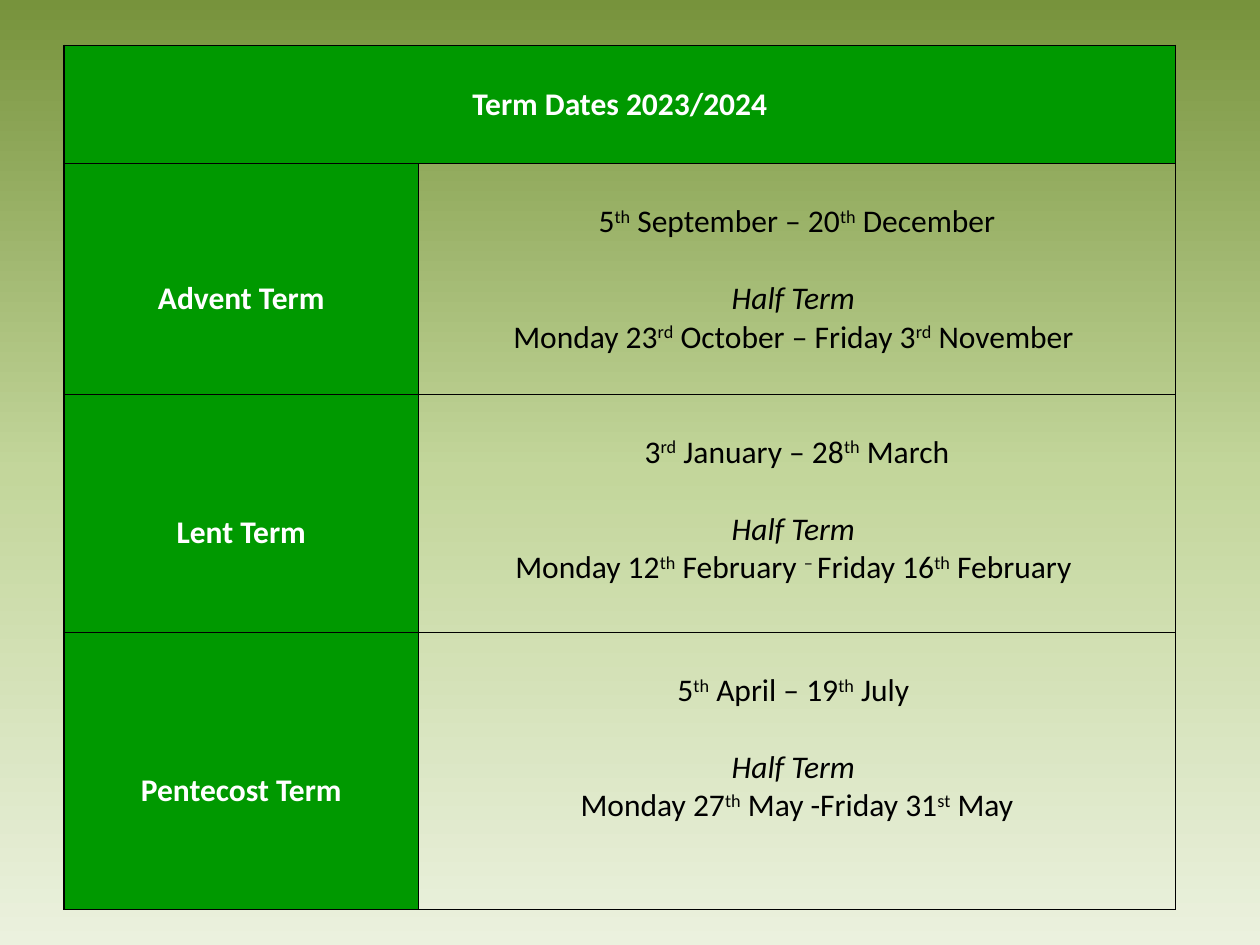
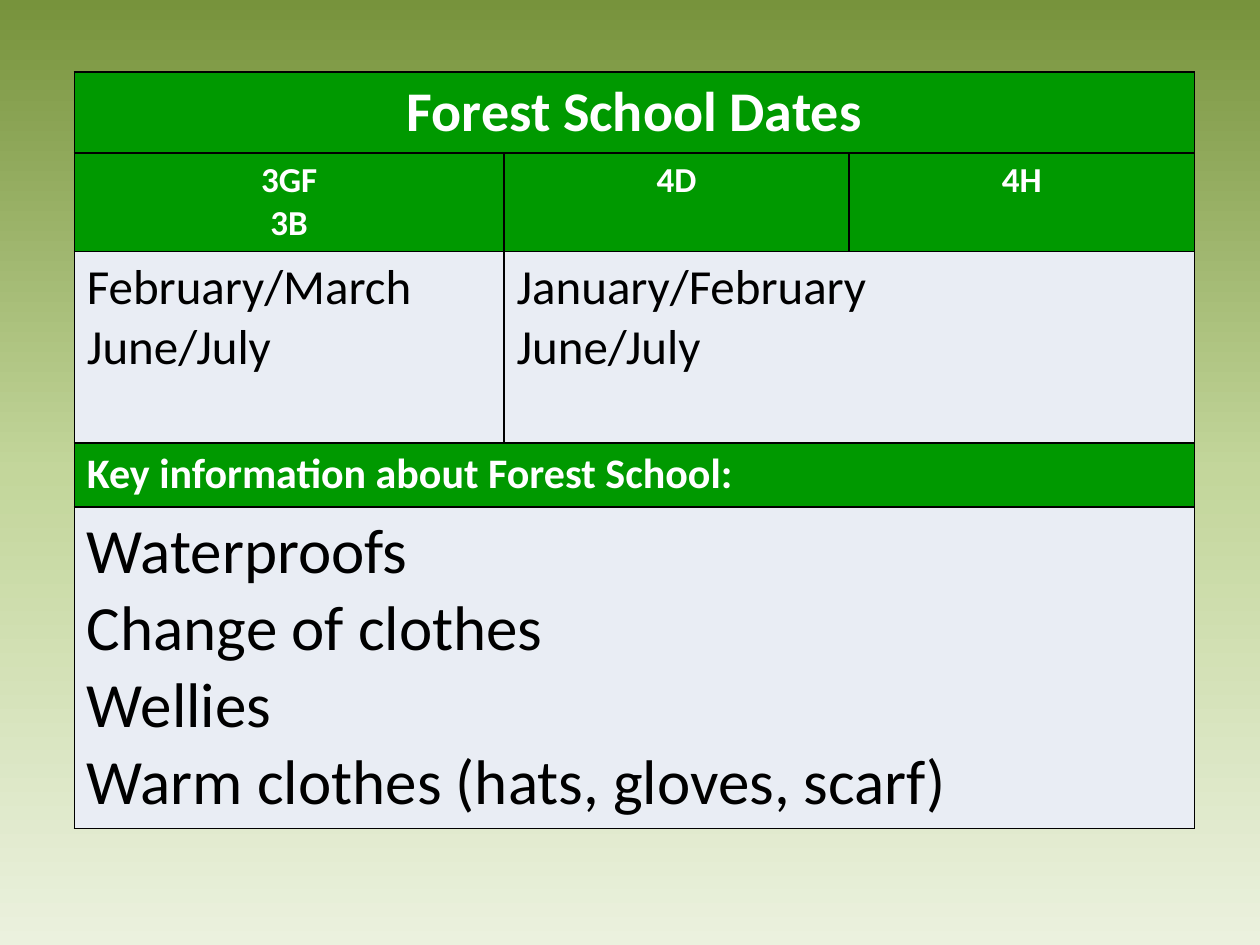
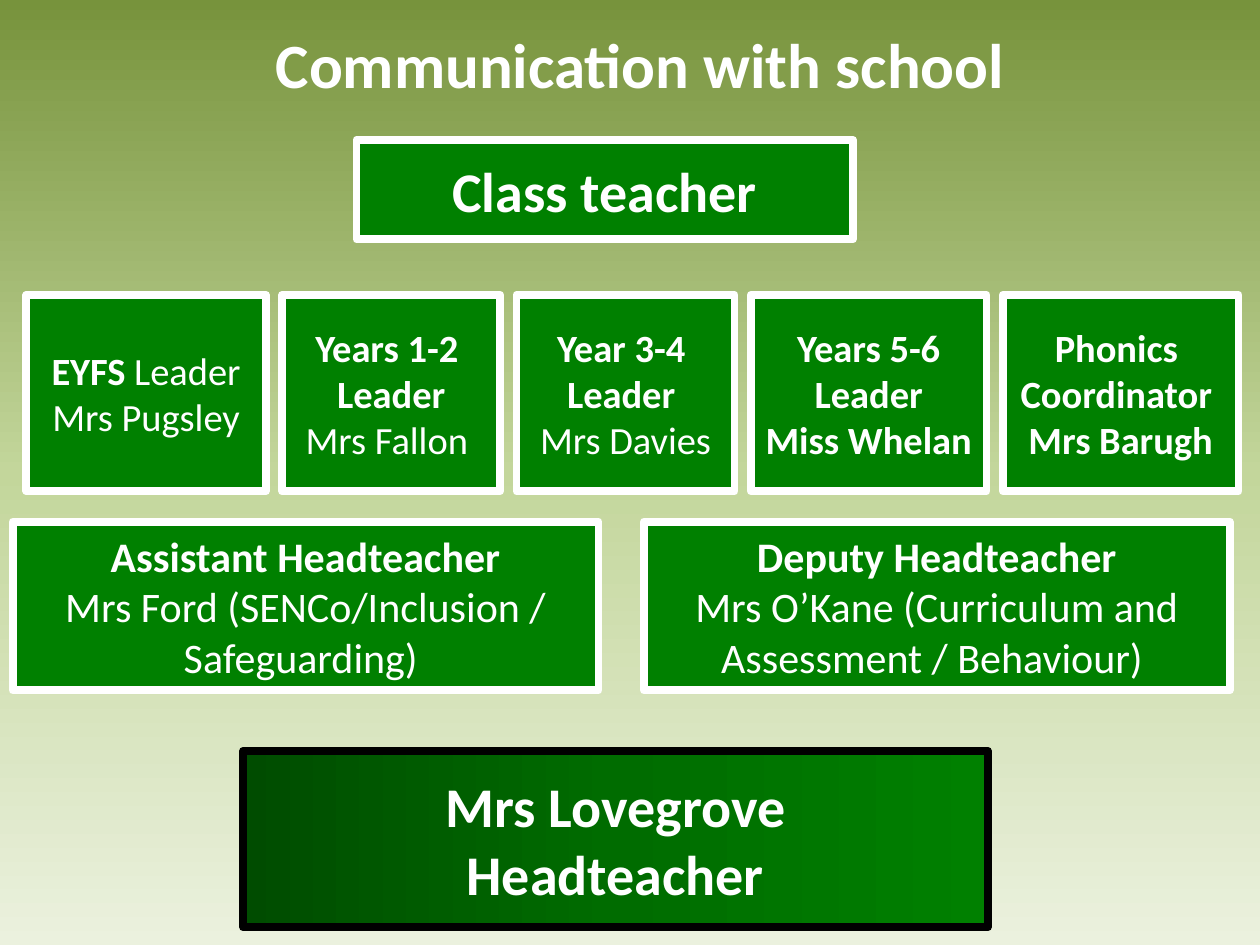
from lxml.etree import SubElement
from pptx import Presentation
from pptx.dml.color import RGBColor
from pptx.enum.shapes import MSO_SHAPE as Shape
from pptx.enum.text import MSO_ANCHOR as Anchor, PP_ALIGN as Align
from pptx.oxml.ns import qn
from pptx.util import Inches, Pt

COLORS = {
    "white": "FFFFFF",
    "black": "000000",
    "table green": "009900",
    "box green": "008000",
    "pale": "E9EDF4",
}
BACKGROUND = [(0, "77933C"), (50, "C3D69B"), (100, "EBF1DE")]
HEAD_GRADIENT = [(0, "004C00"), (50, "006C00"), (100, "008000")]
FONT = "Calibri"
BOLD, ITALIC, RAISED = "*", "_", "^"  # marks that switch a style on and off

TERMS = [
    ("Advent Term", 1.83, "5^th^ September – 20^th^ December",
     "Monday 23^rd^ October – Friday 3^rd^ November "),
    ("Lent Term", 1.89, "3^rd^ January – 28^th^ March",
     "Monday 12^th^ February ^– ^Friday 16^th^ February "),
    ("Pentecost Term", 2.2, "5^th^ April – 19^th^ July ",
     "Monday 27^th^ May -Friday 31^st^ May"),
]
LEADERS = [
    (1.9, ["*EYFS* Leader", "Mrs Pugsley"]),
    (1.73, ["*Years 1-2 *", "*Leader*", "Mrs Fallon "]),
    (1.73, ["*Year 3-4 *", "*Leader *", "Mrs Davies"]),
    (1.87, ["*Years 5-6*", "*Leader*", "*Miss Whelan *"]),
    (1.87, ["*Phonics *", "*Coordinator *", "*Mrs Barugh*"]),
]
DEPUTIES = [
    (0.1, ["*Assistant Headteacher*", "Mrs Ford (SENCo/Inclusion / Safeguarding) "]),
    (5.11, ["*Deputy Headteacher*", "Mrs O’Kane (Curriculum and Assessment / Behaviour) "]),
]


def rgb(name):
    return RGBColor.from_string(COLORS[name])


# Fills
def set_gradient(fill, owner, stops, angle):
    fill.gradient()
    gradient = next(owner.iter(qn("a:gradFill")))
    stop_list = gradient.find(qn("a:gsLst"))
    for stop in list(stop_list):
        stop_list.remove(stop)
    for position, color in stops:
        stop = SubElement(stop_list, qn("a:gs"), pos=str(position * 1000))
        SubElement(stop, qn("a:srgbClr"), val=color)
    gradient.find(qn("a:lin")).set("ang", str(angle * 60000))


def add_page(deck):
    page = deck.slides.add_slide(deck.slide_layouts[6])
    set_gradient(page.background.fill, page._element, BACKGROUND, 90)
    return page


# Text
def add_spans(para, line, size, color):
    marks = {BOLD, ITALIC, RAISED}
    for mark in marks:
        line = line.replace(mark, f"|{mark}|")
    active = set()
    for piece in line.split("|"):
        if piece in marks:
            active ^= {piece}
        elif piece:
            span = para.add_run()
            span.text = piece
            font = span.font
            font.name, font.size = FONT, Pt(size)
            font.color.rgb = rgb(color)
            font.bold, font.italic = BOLD in active, ITALIC in active
            if RAISED in active:
                span._r.get_or_add_rPr().set("baseline", "30000")


def write_lines(frame, lines, size, color, align=Align.CENTER):
    for index, line in enumerate(lines):
        para = frame.add_paragraph() if index else frame.paragraphs[0]
        para.alignment = align
        add_spans(para, line, size, color)


# Tables
def add_border(cell):
    properties = cell._tc.get_or_add_tcPr()
    for index, side in enumerate(("a:lnL", "a:lnR", "a:lnT", "a:lnB")):
        line = properties.makeelement(qn(side), {"w": str(Pt(1))})
        fill = SubElement(line, qn("a:solidFill"))
        SubElement(fill, qn("a:srgbClr"), val=COLORS["black"])
        properties.insert(index, line)


def add_grid(page, left, top, widths, heights):
    table = page.shapes.add_table(
        len(heights), len(widths), Inches(left), Inches(top),
        Inches(sum(widths)), Inches(sum(heights))).table
    table.first_row = table.horz_banding = False
    for column, width in zip(table.columns, widths):
        column.width = Inches(width)
    for row, height in zip(table.rows, heights):
        row.height = Inches(height)
    for cell in table.iter_cells():
        cell.fill.background()
        add_border(cell)
    return table


def fill_cell(cell, lines, size, color, fill=None, align=Align.CENTER, anchor=Anchor.TOP):
    if fill:
        cell.fill.solid()
        cell.fill.fore_color.rgb = rgb(fill)
    cell.vertical_anchor = anchor
    write_lines(cell.text_frame, lines, size, color, align)


def fill_heading(cell, lines, size, align=Align.CENTER, anchor=Anchor.TOP):
    bold_lines = [f"*{line}*" for line in lines]
    fill_cell(cell, bold_lines, size, "white", "table green", align, anchor)


def fill_body(cell, lines, size):
    fill_cell(cell, lines, size, "black", "pale", Align.LEFT)


# Boxes
def add_box(page, left, top, width, height, lines, size, outline="white"):
    box = page.shapes.add_shape(
        Shape.RECTANGLE, Inches(left), Inches(top), Inches(width), Inches(height))
    box.shadow.inherit = False
    box.fill.solid()
    box.fill.fore_color.rgb = rgb("box green")
    box.line.color.rgb = rgb(outline)
    box.line.width = Pt(4.5)
    box.text_frame.word_wrap = True
    box.text_frame.vertical_anchor = Anchor.MIDDLE
    write_lines(box.text_frame, lines, size, "white")
    return box


# Slides
def build_term_dates(deck):
    heights = [0.94] + [height for _, height, _, _ in TERMS]
    table = add_grid(add_page(deck), 0.51, 0.36, [2.81, 6.01], heights)
    for cell in table.iter_cells():
        cell.margin_left = cell.margin_right = Inches(0.07)
        cell.margin_top = cell.margin_bottom = 0

    table.cell(0, 0).merge(table.cell(0, 1))
    fill_heading(table.cell(0, 0), ["Term Dates 2023/2024"], 18, anchor=Anchor.MIDDLE)
    for row, (term, _, dates, half_term) in enumerate(TERMS, 1):
        name_cell, date_cell = table.cell(row, 0), table.cell(row, 1)
        fill_heading(name_cell, [term], 18, anchor=Anchor.MIDDLE)
        name_cell.text_frame.paragraphs[0].line_spacing = 2.0
        date_cell.margin_top = Inches(0.31)
        fill_cell(date_cell, [dates, "_Half Term _", half_term], 18, "black")
        date_cell.text_frame.paragraphs[1].space_before = Pt(22)


def build_forest_school(deck):
    table = add_grid(add_page(deck), 0.59, 0.57, [3.41, 2.74, 2.74],
                     [0.64, 0.78, 1.52, 0.51, 2.55])
    for row, first_column in [(0, 0), (2, 1), (3, 0), (4, 0)]:
        table.cell(row, first_column).merge(table.cell(row, 2))

    fill_heading(table.cell(0, 0), ["Forest School Dates"], 32)
    for column, classes in enumerate([["3GF", "3B"], ["4D"], ["4H"]]):
        fill_heading(table.cell(1, column), classes, 20)
    fill_body(table.cell(2, 0), ["February/March", "June/July"], 28)
    fill_body(table.cell(2, 1), ["January/February", "June/July"], 28)
    fill_heading(table.cell(3, 0), ["Key information about Forest School:"], 24, Align.LEFT)
    fill_body(table.cell(4, 0), ["Waterproofs", "Change of clothes", "Wellies",
                                 "Warm clothes (hats, gloves, scarf)"], 36)


def build_communication(deck):
    page = add_page(deck)
    title = page.shapes.add_textbox(Inches(2.09), Inches(0.15), Inches(6.46), Inches(0.71))
    title.text_frame.word_wrap = True
    write_lines(title.text_frame, ["*Communication with school*"], 36, "white", Align.LEFT)

    add_box(page, 2.83, 1.11, 3.94, 0.79, ["*Class teacher*"], 32)
    left, gap = 0.21, 0.13
    for width, lines in LEADERS:
        add_box(page, left, 2.34, width, 1.56, lines, 22)
        left += width + gap
    for left, lines in DEPUTIES:
        add_box(page, left, 4.14, 4.65, 1.34, lines, 24)
    head = add_box(page, 1.93, 5.96, 5.91, 1.4,
                   ["*Mrs Lovegrove*", "*Headteacher*"], 32, "black")
    set_gradient(head.fill, head._element, HEAD_GRADIENT, 0)


def main():
    deck = Presentation()
    deck.slide_width, deck.slide_height = Inches(10), Inches(7.5)
    build_term_dates(deck)
    build_forest_school(deck)
    build_communication(deck)
    deck.save("out.pptx")


if __name__ == "__main__":
    main()
